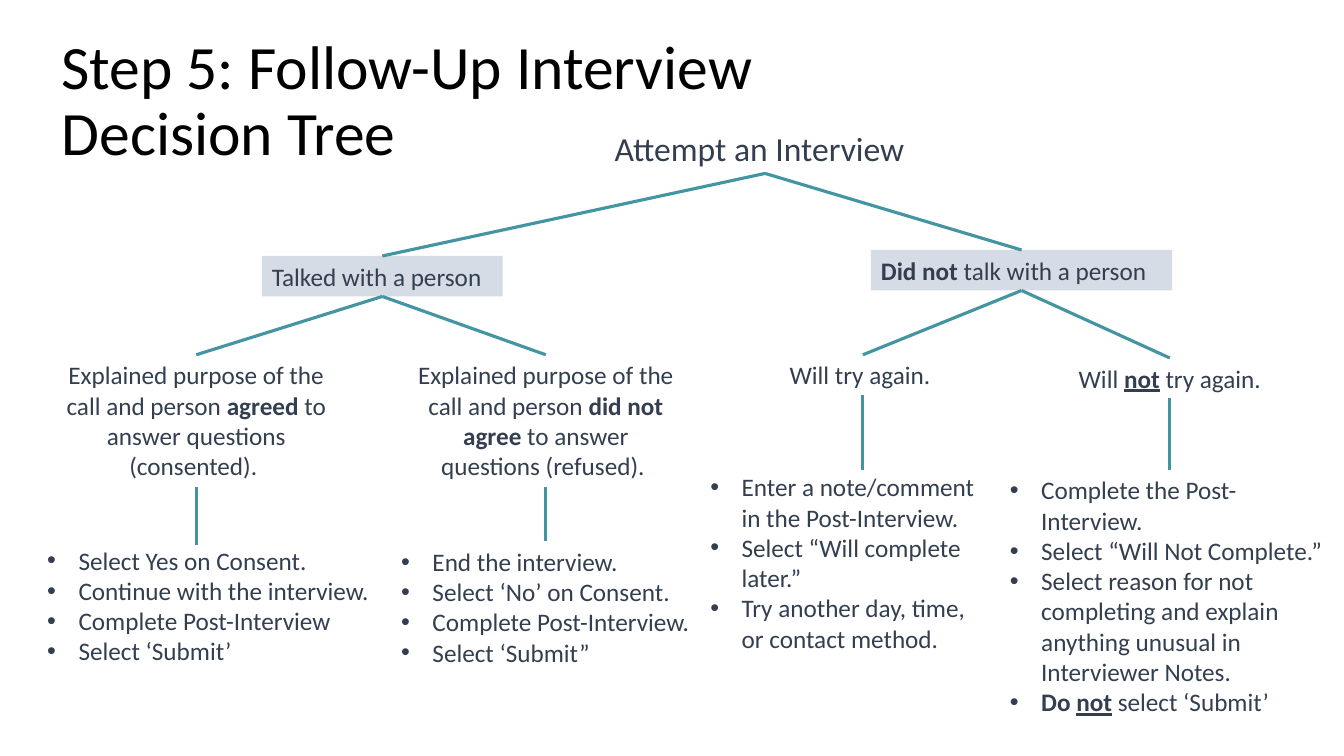
from dataclasses import dataclass
from typing import Any, Optional

import lxml.etree
import pptx
import pptx.dml.color
import pptx.enum.shapes
import pptx.enum.text
import pptx.oxml
import pptx.oxml.ns
import pptx.util

Cm = pptx.util.Cm
Pt = pptx.util.Pt
ALIGN = pptx.enum.text.PP_ALIGN

COLOURS = {"title": "000000", "text": "333F50", "band": "D6DCE5", "branch": "4495A2"}
FONT = "Calibri"
BULLET_INDENT = Cm(0.79)


@dataclass(frozen=True)
class Piece:
    text: str
    bold: bool = False
    underline: bool = False


Line = tuple[Piece, ...]


@dataclass(frozen=True)
class Label:
    """A block of text; all lengths are in centimetres."""
    left: float
    top: float
    width: float
    height: float
    lines: tuple[Line, ...]
    size: int = 18
    centred: bool = False
    bulleted: bool = False
    wrap: bool = True
    fill: Optional[str] = None

    @property
    def middle(self) -> float:
        return self.left + self.width / 2

    @property
    def bottom(self) -> float:
        return self.top + self.height


@dataclass(frozen=True)
class Outcome:
    answer: Label
    actions: Label
    stem_end: float


@dataclass(frozen=True)
class Branch:
    contact: Label
    outcomes: tuple[Outcome, ...]


def plain(*texts: str) -> tuple[Line, ...]:
    return tuple((Piece(text),) for text in texts)


def contact(left: float, top: float, width: float, *pieces: Piece) -> Label:
    return Label(left, top, width, 1.02, (pieces,), wrap=False, fill="band")


def answer(left: float, top: float, width: float, height: float, *pieces: Piece) -> Label:
    return Label(left, top, width, height, (pieces,), centred=True)


def actions(left: float, top: float, width: float, height: float, lines: tuple[Line, ...]) -> Label:
    return Label(left, top, width, height, lines, bulleted=True)


ROOT = Label(15.24, 3.1, 8.08, 1.27, plain("Attempt an Interview"), size=24, wrap=False)

BRANCHES = (
    Branch(
        contact(6.6, 6.45, 6.07, Piece("Talked with a person")),
        (
            Outcome(
                answer(1.3, 8.94, 7.29, 3.33,
                       Piece("Explained purpose of the call and person "),
                       Piece("agreed", bold=True),
                       Piece(" to answer questions (consented). ")),
                actions(0.94, 13.61, 8.69, 3.33, plain(
                    "Select Yes on Consent.", "Continue with the interview.",
                    "Complete Post-Interview", "Select ‘Submit’")),
                13.74),
            Outcome(
                answer(10.11, 8.94, 7.29, 3.33,
                       Piece("Explained purpose of the call and person "),
                       Piece("did not agree ", bold=True),
                       Piece("to answer questions (refused). ")),
                actions(9.86, 13.64, 7.82, 3.33, plain(
                    "End the interview.", "Select ‘No’ on Consent.",
                    "Complete Post-Interview.", "Select ‘Submit”")),
                13.64),
        )),
    Branch(
        contact(21.95, 6.3, 7.59, Piece("Did not", bold=True), Piece(" talk with a person")),
        (
            Outcome(
                answer(19.41, 8.94, 4.67, 1.02, Piece("Will try again. ")),
                actions(17.65, 11.76, 7.39, 4.88, plain(
                    "Enter a note/comment in the Post-Interview.",
                    "Select “Will complete later.”",
                    "Try another day, time, or contact method.")),
                11.84),
            Outcome(
                answer(26.9, 9.02, 5.16, 1.02, Piece("Will "),
                       Piece("not", bold=True, underline=True), Piece(" try again. ")),
                actions(25.2, 11.84, 8.53, 6.4, plain(
                    "Complete the Post-Interview.", "Select “Will Not Complete.”",
                    "Select reason for not completing and explain anything unusual"
                    " in Interviewer Notes.")
                    + ((Piece("Do ", bold=True), Piece("not", bold=True, underline=True),
                        Piece(" select ‘Submit’")),)),
                11.84),
        )),
)


def colour(name: str) -> pptx.dml.color.RGBColor:
    return pptx.dml.color.RGBColor.from_string(COLOURS[name])


def add_bullet(para: Any) -> None:
    properties = para._p.get_or_add_pPr()
    properties.set("marL", str(BULLET_INDENT))
    properties.set("indent", str(-BULLET_INDENT))
    for tag, key, value in (("a:buFont", "typeface", "Arial"), ("a:buChar", "char", "•")):
        lxml.etree.SubElement(properties, pptx.oxml.ns.qn(tag)).set(key, value)


def style_font(font: Any, size: int, name: str) -> None:
    font.name = FONT
    font.size = Pt(size)
    font.color.rgb = colour(name)


def add_label(slide: Any, label: Label) -> None:
    place = [Cm(length) for length in (label.left, label.top, label.width, label.height)]
    if label.fill:
        box = slide.shapes.add_shape(pptx.enum.shapes.MSO_SHAPE.RECTANGLE, *place)
        box.shadow.inherit = False
        box.fill.solid()
        box.fill.fore_color.rgb = colour(label.fill)
        box.line.fill.background()
    else:
        box = slide.shapes.add_textbox(*place)
    frame = box.text_frame
    frame.word_wrap = label.wrap
    frame.auto_size = pptx.enum.text.MSO_AUTO_SIZE.SHAPE_TO_FIT_TEXT
    frame.vertical_anchor = pptx.enum.text.MSO_ANCHOR.TOP
    for index, line in enumerate(label.lines):
        para = frame.add_paragraph() if index else frame.paragraphs[0]
        para.alignment = ALIGN.CENTER if label.centred else ALIGN.LEFT
        if label.bulleted:
            add_bullet(para)
        for piece in line:
            span = para.add_run()
            span.text = piece.text
            style_font(span.font, label.size, "text")
            span.font.bold = piece.bold
            span.font.underline = piece.underline


def add_line(slide: Any, start: Label, end_x: float, end_y: float) -> None:
    """Draw a line from the bottom middle of a label to a point."""
    line = slide.shapes.add_connector(
        pptx.enum.shapes.MSO_CONNECTOR.STRAIGHT,
        Cm(start.middle), Cm(start.bottom), Cm(end_x), Cm(end_y))
    line.line.color.rgb = colour("branch")
    line.line.width = Pt(2.25)
    lxml.etree.SubElement(line._element.spPr, pptx.oxml.ns.qn("a:effectLst"))


def add_title(slide: Any, first: str, second: str) -> None:
    title = slide.shapes.title
    title.left, title.top, title.width, title.height = Cm(1.3), Cm(0.74), Cm(26.57), Cm(3.68)
    frame = title.text_frame
    frame.auto_size = pptx.enum.text.MSO_AUTO_SIZE.NONE
    frame.vertical_anchor = pptx.enum.text.MSO_ANCHOR.MIDDLE
    para = frame.paragraphs[0]
    para.alignment = ALIGN.LEFT
    para.line_spacing = 0.9
    para.add_run().text = first
    para.add_line_break()
    para.add_run().text = second
    for span in para.runs:
        style_font(span.font, 44, "title")


def main() -> None:
    deck = pptx.Presentation()
    deck.slide_width, deck.slide_height = Cm(33.87), Cm(19.05)
    page = deck.slides.add_slide(deck.slide_layouts.get_by_name("Title Only"))
    add_title(page, "Step 5: Follow-Up Interview", "Decision Tree")
    add_label(page, ROOT)
    for branch in BRANCHES:
        add_label(page, branch.contact)
        add_line(page, ROOT, branch.contact.middle, branch.contact.top)
        for outcome in branch.outcomes:
            add_label(page, outcome.answer)
            add_label(page, outcome.actions)
            add_line(page, branch.contact, outcome.answer.middle, outcome.answer.top)
            add_line(page, outcome.answer, outcome.answer.middle, outcome.stem_end)
    deck.save("out.pptx")


if __name__ == "__main__":
    main()
